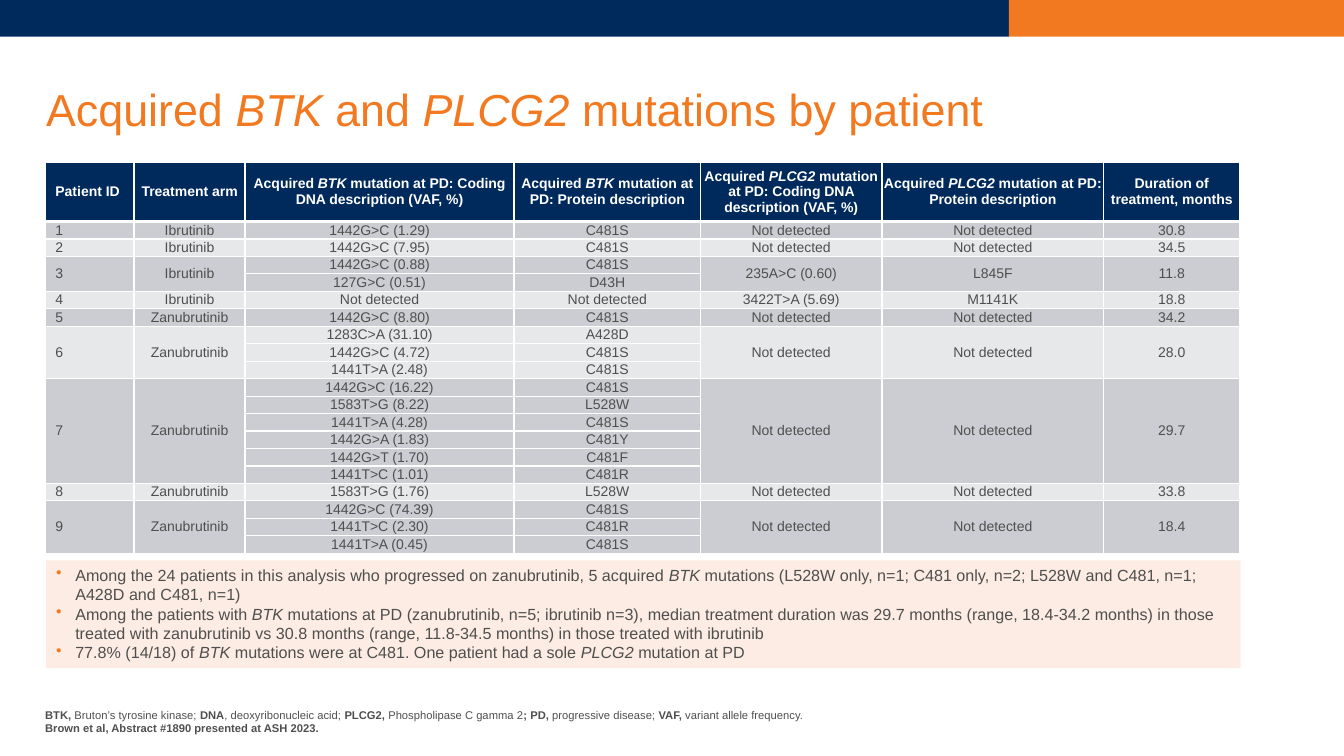
"""Build the slide on acquired mutations by patient."""
from dataclasses import dataclass
from typing import Any

from lxml.etree import SubElement
from pptx import Presentation
from pptx.dml.color import RGBColor
from pptx.enum.shapes import MSO_SHAPE
from pptx.enum.text import MSO_ANCHOR, PP_ALIGN
from pptx.oxml.ns import qn
from pptx.util import Pt

HUES = {"navy": "002A5C", "orange": "F37920", "text": "4E4F4E", "white": "FFFFFF",
        "dark": "CBCDD2", "light": "E7E8EA", "peach": "FDECE3"}
FLUSH = {"margin_left": 0, "margin_right": 0, "margin_top": 0, "margin_bottom": 0}
PAD = Pt(7.2)
WIDTHS = [63.4, 79.2, 192.2, 133.2, 129.6, 158.4, 97.2]
HEAD, ROW = 42.3, 12.5
NONE = "Not detected"


@dataclass
class Box:
    """Place of an item, in points."""
    left: float
    top: float
    width: float
    height: float

    def place(self) -> list[int]:
        """Give the place as lengths."""
        return [Pt(n) for n in (self.left, self.top, self.width, self.height)]


@dataclass
class Style:
    """Look of text; starred words take the mark attribute."""
    size: float
    hue: str
    bold: bool = False
    mark: str = "italic"


@dataclass
class Case:
    """Findings of one patient."""
    arm: str
    finds: list[tuple[str, str]]
    months: str
    coding: str = NONE
    protein: str = NONE


IBR, ZAN = "Ibrutinib", "Zanubrutinib"
CASES = [
    Case(IBR, [("1442G>C (1.29)", "C481S")], "30.8"),
    Case(IBR, [("1442G>C (7.95)", "C481S")], "34.5"),
    Case(IBR, [("1442G>C (0.88)", "C481S"), ("127G>C (0.51)", "D43H")],
         "11.8", "235A>C (0.60)", "L845F"),
    Case(IBR, [(NONE, NONE)], "18.8", "3422T>A (5.69)", "M1141K"),
    Case(ZAN, [("1442G>C (8.80)", "C481S")], "34.2"),
    Case(ZAN, [("1283C>A (31.10)", "A428D"), ("1442G>C (4.72)", "C481S"),
               ("1441T>A (2.48)", "C481S")], "28.0"),
    Case(ZAN, [("1442G>C (16.22)", "C481S"), ("1583T>G (8.22)", "L528W"),
               ("1441T>A (4.28)", "C481S"), ("1442G>A (1.83)", "C481Y"),
               ("1442G>T (1.70)", "C481F"), ("1441T>C (1.01)", "C481R")], "29.7"),
    Case(ZAN, [("1583T>G (1.76)", "L528W")], "33.8"),
    Case(ZAN, [("1442G>C (74.39)", "C481S"), ("1441T>C (2.30)", "C481R"),
               ("1441T>A (0.45)", "C481S")], "18.4"),
]
HEADS = [
    "Patient ID", "Treatment arm",
    "Acquired *BTK* mutation at PD: Coding DNA description (VAF, %)",
    "Acquired *BTK* mutation at PD: Protein description",
    "Acquired *PLCG2* mutation at PD: Coding DNA description (VAF, %)",
    "Acquired *PLCG2* mutation at PD: Protein description",
    "Duration of treatment, months",
]
NOTES = [
    "Among the 24 patients in this analysis who progressed on zanubrutinib, 5 acquired *BTK* "
    "mutations (L528W only, n=1; C481 only, n=2; L528W and C481, n=1; A428D and C481, n=1)",
    "Among the patients with *BTK* mutations at PD (zanubrutinib, n=5; ibrutinib n=3), median "
    "treatment duration was 29.7 months (range, 18.4-34.2 months) in those treated with "
    "zanubrutinib vs 30.8 months (range, 11.8-34.5 months) in those treated with ibrutinib",
    "77.8% (14/18) of *BTK* mutations were at C481. One patient had a sole *PLCG2* mutation at PD",
]
FOOT = [
    "*BTK, *Bruton’s tyrosine kinase; *DNA*, deoxyribonucleic acid; *PLCG2, *Phospholipase C "
    "gamma 2*; PD, *progressive disease; *VAF, *variant allele frequency.",
    "*Brown et al, Abstract #1890 presented at ASH 2023.*",
]


def tint(name: str) -> RGBColor:
    """Look up a colour."""
    return RGBColor.from_string(HUES[name])


def adjust(item: Any, values: dict[str, Any]) -> None:
    """Set attributes from a dict."""
    for name, value in values.items():
        setattr(item, name, value)


def write(frame: Any, lines: list[str], style: Style, form: dict[str, Any],
          dots: bool = False) -> None:
    """Fill a text frame with marked lines."""
    for i, line in enumerate(lines):
        para = frame.add_paragraph() if i else frame.paragraphs[0]
        if dots:
            props = para._p.get_or_add_pPr()
            props.set("marL", str(Pt(13.7)))
            props.set("indent", str(-Pt(13.7)))
            SubElement(SubElement(props, qn("a:buClr")), qn("a:srgbClr"), val=HUES["orange"])
            SubElement(props, qn("a:buChar"), char="•")
        adjust(para, form)
        for j, part in enumerate(line.split("*")):
            if part or not line:
                run = para.add_run()
                run.text = part
                look = {"name": "Arial", "size": Pt(style.size), "bold": style.bold,
                        "italic": False}
                if j % 2:
                    look[style.mark] = True
                adjust(run.font, look)
                run.font.color.rgb = tint(style.hue)


def panel(slide: Any, box: Box, hue: str) -> Any:
    """Draw a plain filled block."""
    shape = slide.shapes.add_shape(MSO_SHAPE.RECTANGLE, *box.place())
    shape.shadow.inherit = False
    shape.fill.solid()
    shape.fill.fore_color.rgb = tint(hue)
    shape.line.fill.background()
    return shape


def label(slide: Any, box: Box, lines: list[str], style: Style,
          anchor: MSO_ANCHOR, space: float) -> None:
    """Add a flush text box."""
    frame = slide.shapes.add_textbox(*box.place()).text_frame
    adjust(frame, FLUSH | {"word_wrap": True, "vertical_anchor": anchor})
    write(frame, lines, style, {"line_spacing": space})


def paint(cell: Any, text: str, row: int, col: int, hue: str) -> None:
    """Write, rule and fill one table cell."""
    side = 0 if col else PAD
    adjust(cell, FLUSH | {"margin_left": side, "margin_right": side,
                          "vertical_anchor": MSO_ANCHOR.MIDDLE})
    style = Style(10, "text" if row else "white", not row)
    write(cell.text_frame, [text], style,
          {"alignment": PP_ALIGN.CENTER if col else PP_ALIGN.LEFT})
    thick = {0: "lnB", 1: "lnT"}.get(row)
    props = cell._tc.get_or_add_tcPr()
    for edge in ("lnL", "lnR", "lnT", "lnB"):
        line = SubElement(props, qn("a:" + edge), w=str(Pt(3 if edge == thick else 1)))
        SubElement(SubElement(line, qn("a:solidFill")), qn("a:srgbClr"), val=HUES["white"])
    cell.fill.solid()
    cell.fill.fore_color.rgb = tint(hue)


def chart(slide: Any) -> None:
    """Add the table of patients."""
    count = 1 + sum(len(case.finds) for case in CASES)
    box = Box(32.4, 115.9, sum(WIDTHS), HEAD + ROW * (count - 1))
    grid = slide.shapes.add_table(count, len(WIDTHS), *box.place()).table
    grid.horz_banding = False
    for col, width in zip(grid.columns, WIDTHS):
        col.width = Pt(width)
    for i, row in enumerate(grid.rows):
        row.height = Pt(ROW if i else HEAD)
    for col, text in enumerate(HEADS):
        paint(grid.cell(0, col), text, 0, col, "navy")
    top = 1
    for num, case in enumerate(CASES, 1):
        last = top + len(case.finds) - 1
        for i, find in enumerate(case.finds):
            ends = [str(num), case.arm, case.coding, case.protein, case.months]
            if i:
                ends = [""] * 5
            for col, text in enumerate([*ends[:2], *find, *ends[2:]]):
                paint(grid.cell(top + i, col), text, top + i, col,
                      "dark" if num % 2 else "light")
        if last > top:
            for col in (0, 1, 4, 5, 6):
                grid.cell(top, col).merge(grid.cell(last, col))
        top = last + 1


def main() -> None:
    """Build and save the deck."""
    deck = Presentation()
    adjust(deck, {"slide_width": Pt(960), "slide_height": Pt(540)})
    slide = deck.slides.add_slide(deck.slide_layouts[6])
    panel(slide, Box(0, 0, 720.7, 26.2), "navy")
    panel(slide, Box(720.7, 0, 239.3, 26.2), "orange")
    label(slide, Box(33, 45.4, 895, 69.8), ["Acquired *BTK* and *PLCG2* mutations by patient"],
          Style(32, "orange"), MSO_ANCHOR.MIDDLE, 0.9)
    label(slide, Box(32.2, 494.6, 671.8, 30.2), FOOT, Style(8, "text", mark="bold"),
          MSO_ANCHOR.BOTTOM, 1.0)
    chart(slide)
    frame = panel(slide, Box(33, 400.3, 853.2, 77), "peach").text_frame
    adjust(frame, {"word_wrap": True, "vertical_anchor": MSO_ANCHOR.TOP})
    write(frame, NOTES, Style(11.5, "text"), {"alignment": PP_ALIGN.LEFT}, True)
    deck.save("out.pptx")


if __name__ == "__main__":
    main()
